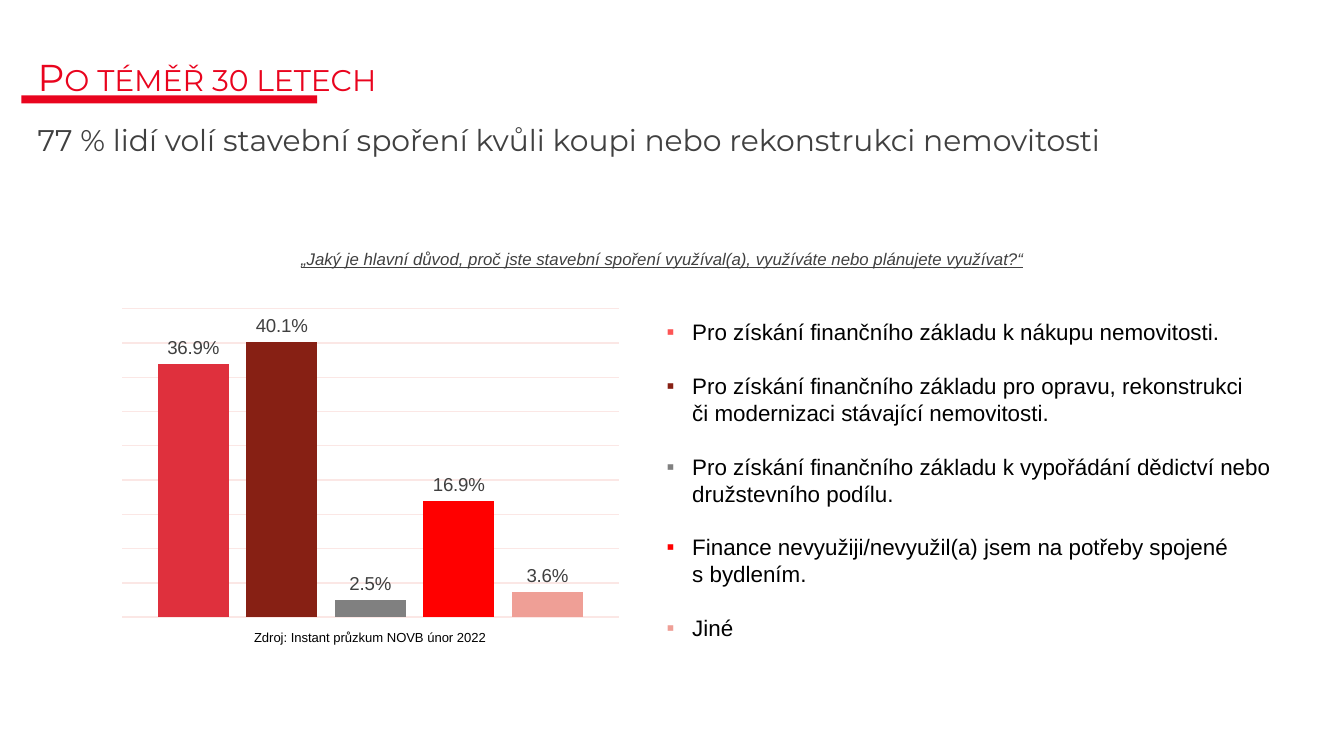
from dataclasses import dataclass

from lxml.etree import SubElement
from pptx import Presentation
from pptx.chart.data import CategoryChartData
from pptx.dml.color import RGBColor as RGB
from pptx.enum.chart import XL_CHART_TYPE as ChartType, XL_LABEL_POSITION as LabelPos
from pptx.enum.shapes import MSO_SHAPE as Shape
from pptx.enum.text import MSO_ANCHOR as Anchor, MSO_AUTO_SIZE as AutoSize, PP_ALIGN as Align
from pptx.oxml.ns import qn
from pptx.util import Inches, Pt


@dataclass(frozen=True)
class Theme:
    accent: str = "E9041E"
    dark: str = "404040"
    text: str = "010101"
    grid: str = "FBE7E5"
    heading_font: str = "Montserrat"
    body_font: str = "Arial"
    chart_font: str = "Lato"
    title_size: float = 20
    subtitle_size: float = 16
    body_size: float = 12
    chart_size: float = 10
    question_size: float = 9
    source_size: float = 7
    line: float = 14.4


T = Theme()
REASONS = [
    (0.369, "DF303D", "FD5555", "Pro získání finančního základu k nákupu nemovitosti."),
    (0.401, "872014", "872014",
     "Pro získání finančního základu pro opravu, rekonstrukci\vči modernizaci stávající nemovitosti."),
    (0.025, "808080", "808080",
     "Pro získání finančního základu k vypořádání dědictví nebo družstevního podílu."),
    (0.169, "FF0000", "FF0000",
     "Finance nevyužiji/nevyužil(a) jsem na potřeby spojené\vs bydlením."),
    (0.036, "EF9F96", "EF9F96", "Jiné"),
]


def style(font, name, size, color):
    font.name = name
    font.size = Pt(size)
    font.color.rgb = RGB.from_string(color)


def place(shape, box):
    shape.left, shape.top, shape.width, shape.height = (Inches(v) for v in box)


def frame(shape, inset, anchor=Anchor.TOP):
    tf = shape.text_frame
    tf.word_wrap = True
    tf.auto_size = AutoSize.NONE
    tf.vertical_anchor = anchor
    tf.margin_left = tf.margin_right = tf.margin_top = tf.margin_bottom = Inches(inset)
    return tf


def add_line(shape, text, font, size, color, inset=0.04, anchor=Anchor.TOP, align=Align.CENTER):
    tf = frame(shape, inset, anchor)
    tf.text = text
    p = tf.paragraphs[0]
    p.alignment = align
    r = p.runs[0]
    style(r.font, font, size, color)
    return p, r


def add_textbox(s, box):
    return s.shapes.add_textbox(*(Inches(v) for v in box))


def add_header(s, x, y, w):
    bar = s.shapes.add_shape(Shape.RECTANGLE, Inches(x - 0.12), Inches(y + 0.24),
                             Inches(2.2), Inches(0.06))
    bar.shadow.inherit = False
    bar.fill.solid()
    bar.fill.fore_color.rgb = RGB.from_string(T.accent)
    bar.line.fill.background()
    s.shapes.element.insert(2, bar.element)

    title = s.shapes.title
    place(title, (x, y, w, 0.26))
    subtitle = add_textbox(s, (x, y + 0.49, w, 0.21))
    for sp, text, size, color in (
        (title, "Po téměř 30 letech", T.title_size, T.accent),
        (subtitle, "77 % lidí volí stavební spoření kvůli koupi nebo rekonstrukci nemovitosti",
         T.subtitle_size, T.dark),
    ):
        p, r = add_line(sp, text, T.heading_font, size, color, 0, Anchor.BOTTOM, Align.LEFT)
        p.line_spacing = 0.75
        if sp is title:
            r.font._element.set("cap", "small")


def add_question(s, box):
    p, r = add_line(add_textbox(s, box),
                    "„Jaký je hlavní důvod, proč jste stavební spoření využíval(a), "
                    "využíváte nebo plánujete využívat?“",
                    T.body_font, T.question_size, T.dark)
    r.font.italic = True
    r.font.underline = True


def add_reason_chart(s, x, y, w, h):
    data = CategoryChartData(number_format="0.0%")
    data.categories = ["1"]
    for i, (value, *_) in enumerate(REASONS, 1):
        data.add_series(f"Series {i}", [value])
    chart = s.shapes.add_chart(ChartType.COLUMN_CLUSTERED, Inches(x), Inches(y),
                               Inches(w), Inches(h), data).chart
    style(chart.font, T.chart_font, T.chart_size, T.text)
    chart.has_legend = False
    chart.has_title = False
    chart.category_axis.visible = False
    axis = chart.value_axis
    axis.visible = False
    axis.minimum_scale, axis.maximum_scale, axis.major_unit = 0, 0.45, 0.05
    axis.tick_labels.number_format = "0.0%"
    axis.tick_labels.number_format_is_linked = False
    grid = axis.major_gridlines.format.line
    grid.color.rgb = RGB.from_string(T.grid)
    grid.width = Pt(0.75)

    plot = chart.plots[0]
    plot.vary_by_categories = False
    plot.gap_width, plot.overlap = 100, -24
    for series, (_, color, *_) in zip(plot.series, REASONS):
        series.format.fill.solid()
        series.format.fill.fore_color.rgb = RGB.from_string(color)
        labels = series.data_labels
        labels.show_value = True
        labels.number_format = "0.0%"
        labels.number_format_is_linked = False
        labels.position = LabelPos.OUTSIDE_END
        style(labels.font, T.body_font, T.chart_size, T.dark)

    add_line(add_textbox(s, (x + 0.96, y + h, w / 2, 0.2)),
             "Zdroj: Instant průzkum NOVB únor 2022", T.body_font, T.source_size, T.text)


def add_bullet(p, color):
    pPr = p._p.get_or_add_pPr()
    indent = Inches(0.19)
    pPr.set("marL", str(indent))
    pPr.set("indent", str(-indent))
    fill = SubElement(pPr, qn("a:buClr"))
    SubElement(fill, qn("a:srgbClr"), val=color)
    SubElement(pPr, qn("a:buFont"), typeface=T.body_font)
    SubElement(pPr, qn("a:buChar"), char="▪")


def add_reason_list(s, box):
    body = s.placeholders[1]
    place(body, box)
    tf = frame(body, 0.04)
    for i, (_, _, color, text) in enumerate(REASONS):
        p = tf.add_paragraph() if i else tf.paragraphs[0]
        p.text = text
        add_bullet(p, color)
        p.alignment = Align.LEFT
        p.line_spacing = Pt(T.line)
        p.space_before = Pt(T.line if i else 0)
        for r in p.runs:
            style(r.font, T.body_font, T.body_size, T.text)


def main():
    prs = Presentation()
    prs.slide_width = Inches(10)
    prs.slide_height = prs.slide_width * 9 // 16
    s = prs.slides.add_slide(prs.slide_layouts[1])
    add_header(s, 0.28, 0.47, 9.29)
    add_question(s, (0.97, 1.81, 7.91, 0.23))
    add_reason_chart(s, 0.83, 2.25, 3.85, 2.39)
    add_reason_list(s, (4.92, 2.33, 4.81, 2.5))
    prs.save("out.pptx")


if __name__ == "__main__":
    main()
